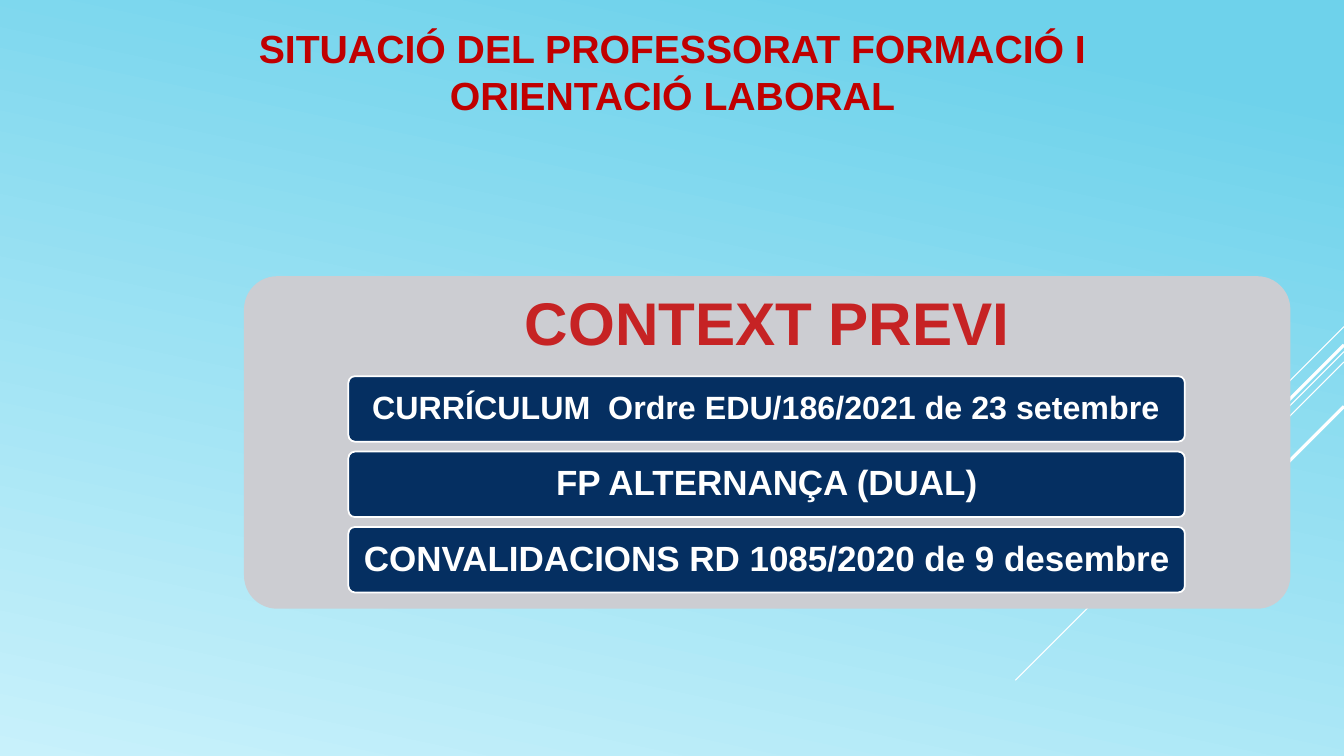
import pptx
import pptx.dml.color
import pptx.enum.shapes
import pptx.enum.text
import pptx.oxml.ns
import pptx.util
from lxml import etree
from dataclasses import dataclass

Cm = pptx.util.Cm
Pt = pptx.util.Pt
ANCHOR = pptx.enum.text.MSO_ANCHOR


@dataclass
class Theme:
    font: str = "Arial"
    sky: str = "6ED2EB"
    pale: str = "C8F1FB"
    white: str = "FFFFFF"
    panel: str = "CCCDD2"
    navy: str = "052F61"
    title: str = "C00000"
    heading: str = "C62324"
    title_size: int = 28
    heading_size: int = 43
    bar_size: int = 25
    small_bar_size: int = 23


def rgb(value):
    return pptx.dml.color.RGBColor.from_string(value)


def write(tf, text, font, size, color, anchor=ANCHOR.MIDDLE, inset=(0.25, 0.13), spacing=0.9):
    tf.word_wrap = True
    tf.auto_size = pptx.enum.text.MSO_AUTO_SIZE.NONE
    tf.vertical_anchor = anchor
    tf.margin_left = tf.margin_right = Cm(inset[0])
    tf.margin_top = tf.margin_bottom = Cm(inset[1])
    p = tf.paragraphs[0]
    p.alignment = pptx.enum.text.PP_ALIGN.CENTER
    p.line_spacing = spacing
    r = p.add_run()
    r.text = text
    r.font.name = font
    r.font.size = Pt(size)
    r.font.bold = True
    r.font.color.rgb = rgb(color)


class SlideBuilder:
    def __init__(self, prs, theme):
        self.theme = theme
        self.s = prs.slides.add_slide(prs.slide_layouts[5])

    def background(self):
        fill = self.s.background.fill
        fill.gradient()
        fill.gradient_angle = 258
        stops = ((0.1, self.theme.sky), (1, self.theme.pale))
        for stop, (position, color) in zip(fill.gradient_stops, stops):
            stop.position = position
            stop.color.rgb = rgb(color)

    def title(self, text, left, top, width, height):
        sp = self.s.shapes.title
        sp.left, sp.top, sp.width, sp.height = map(Cm, (left, top, width, height))
        write(sp.text_frame, text, self.theme.font, self.theme.title_size,
              self.theme.title, anchor=ANCHOR.BOTTOM, spacing=1.0)

    def diagonal(self, right, top, run, weight):
        sp = self.s.shapes.add_connector(
            pptx.enum.shapes.MSO_CONNECTOR.STRAIGHT,
            Cm(right), Cm(top), Cm(right - run), Cm(top + run))
        sp.line.color.rgb = rgb(self.theme.white)
        sp.line.width = Pt(weight)
        etree.SubElement(sp.line._get_or_add_ln().getparent(), pptx.oxml.ns.qn("a:effectLst"))

    def rounded(self, left, top, width, height, fill, outline=None):
        sp = self.s.shapes.add_shape(
            pptx.enum.shapes.MSO_SHAPE.ROUNDED_RECTANGLE,
            Cm(left), Cm(top), Cm(width), Cm(height))
        sp.adjustments[0] = 0.1
        sp.shadow.inherit = False
        sp.fill.solid()
        sp.fill.fore_color.rgb = rgb(fill)
        if outline:
            sp.line.color.rgb = rgb(outline)
            sp.line.width = Pt(1.25)
        else:
            sp.line.fill.background()
        return sp

    def heading(self, text, left, top, width, height):
        sp = self.s.shapes.add_textbox(Cm(left), Cm(top), Cm(width), Cm(height))
        write(sp.text_frame, text, self.theme.font, self.theme.heading_size,
              self.theme.heading, inset=(0.46, 0.46))

    def bar(self, text, size, left, top, width, height):
        sp = self.rounded(left, top, width, height, self.theme.navy, self.theme.white)
        write(sp.text_frame, text, self.theme.font, size, self.theme.white, inset=(0.18, 0.13))


def main():
    prs = pptx.Presentation()
    prs.slide_width, prs.slide_height = Cm(33.87), Cm(19.05)
    theme = Theme()
    slide = SlideBuilder(prs, theme)
    slide.background()
    slide.title("SITUACIÓ DEL PROFESSORAT FORMACIÓ I ORIENTACIÓ LABORAL", 6.15, 0.33, 21.59, 2.79)

    for top, run, weight in (
        (8.23, 2.54, 0.75),
        (8.86, 8.28, 0.75),
        (9.12, 5.27, 0.75),
        (8.69, 4.85, 2.25),
        (10.24, 3.53, 2.25),
    ):
        slide.diagonal(33.87, top, run, weight)

    slide.rounded(6.15, 6.96, 26.37, 8.38, theme.panel)
    slide.heading("CONTEXT PREVI", 6.15, 6.96, 26.37, 2.51)
    bars = (
        ("CURRÍCULUM  Ordre EDU/186/2021 de 23 setembre", theme.small_bar_size),
        ("FP ALTERNANÇA (DUAL)", theme.bar_size),
        ("CONVALIDACIONS RD 1085/2020 de 9 desembre", theme.bar_size),
    )
    for i, (text, size) in enumerate(bars):
        slide.bar(text, size, 8.78, 9.48 + 1.9 * i, 21.08, 1.65)

    prs.save("out.pptx")


if __name__ == "__main__":
    main()
